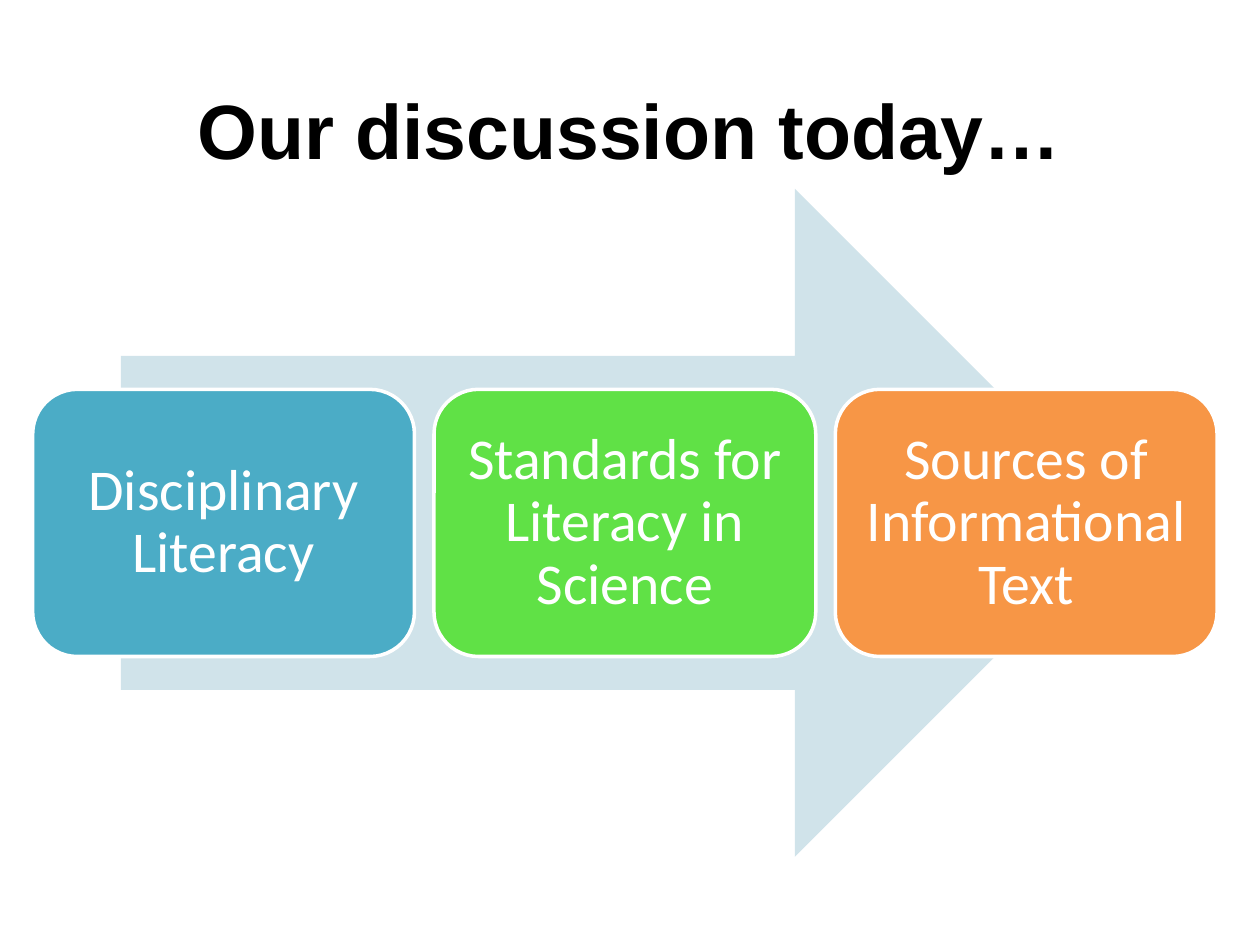
"""Build a slide with three discussion topics set along a broad arrow."""
from dataclasses import dataclass

import pptx
import pptx.dml.color
import pptx.enum.shapes
import pptx.enum.text
import pptx.util
from pptx.util import Inches


@dataclass(frozen=True)
class Theme:
    title_font: str = "Arial"
    topic_font: str = "Calibri"
    title_size: int = 44
    topic_size: int = 33
    title_color: str = "000000"
    white: str = "FFFFFF"
    arrow: str = "D0E3EA"
    teal: str = "4BACC6"
    green: str = "60E146"
    orange: str = "F79646"


THEME = Theme()
TOPICS = [
    ("Disciplinary Literacy", THEME.teal),
    ("Standards for Literacy in Science", THEME.green),
    ("Sources of Informational Text", THEME.orange),
]
TOPIC_LEFT, TOPIC_TOP = 0.26, 3.09
TOPIC_WIDTH, TOPIC_HEIGHT = 3.03, 2.12
TOPIC_PITCH = 3.185


def rgb(value):
    return pptx.dml.color.RGBColor.from_string(value)


def write_text(sp, text, font, size, color, bold=False):
    tf = sp.text_frame
    tf.word_wrap = True
    tf.vertical_anchor = pptx.enum.text.MSO_ANCHOR.MIDDLE
    p = tf.paragraphs[0]
    p.alignment = pptx.enum.text.PP_ALIGN.CENTER
    r = p.add_run()
    r.text = text
    r.font.name = font
    r.font.size = pptx.util.Pt(size)
    r.font.bold = bold
    r.font.color.rgb = rgb(color)
    return tf


def add_title(s, text):
    sp = s.shapes.add_textbox(Inches(0.5), Inches(0.4), Inches(9), Inches(1.25))
    write_text(sp, text, THEME.title_font, THEME.title_size, THEME.title_color, bold=True)


def add_filled_shape(s, kind, left, top, width, height, color):
    sp = s.shapes.add_shape(kind, Inches(left), Inches(top), Inches(width), Inches(height))
    sp.shadow.inherit = False
    sp.fill.solid()
    sp.fill.fore_color.rgb = rgb(color)
    sp.line.fill.background()
    return sp


def add_topic(s, left, text, color):
    kind = pptx.enum.shapes.MSO_SHAPE.ROUNDED_RECTANGLE
    sp = add_filled_shape(s, kind, left, TOPIC_TOP, TOPIC_WIDTH, TOPIC_HEIGHT, color)
    sp.line.color.rgb = rgb(THEME.white)
    sp.line.width = pptx.util.Pt(2)
    tf = write_text(sp, text, THEME.topic_font, THEME.topic_size, THEME.white)
    tf.margin_left = tf.margin_right = tf.margin_top = tf.margin_bottom = Inches(0.14)
    tf.paragraphs[0].line_spacing = 0.9


def main():
    prs = pptx.Presentation()
    prs.slide_width, prs.slide_height = Inches(10), Inches(7.5)
    s = prs.slides.add_slide(prs.slide_layouts[6])
    add_title(s, "Our discussion today…")
    add_filled_shape(s, pptx.enum.shapes.MSO_SHAPE.RIGHT_ARROW, 0.96, 1.5, 8, 5.3, THEME.arrow)
    for i, (text, color) in enumerate(TOPICS):
        add_topic(s, TOPIC_LEFT + i * TOPIC_PITCH, text, color)
    prs.save("out.pptx")


if __name__ == "__main__":
    main()
